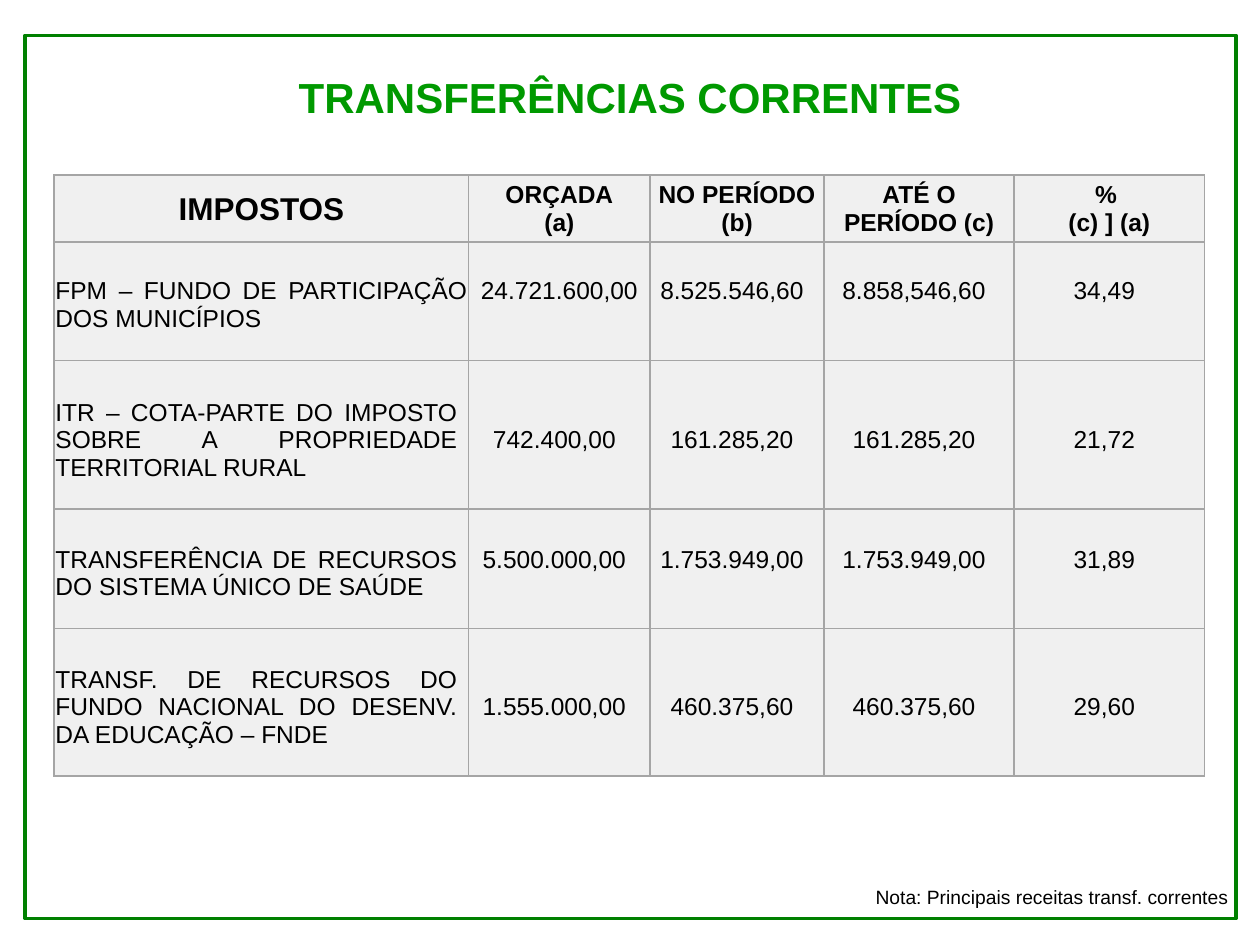
from lxml import etree
from pptx import Presentation
from pptx.dml.color import RGBColor
from pptx.enum.shapes import MSO_SHAPE
from pptx.enum.text import MSO_ANCHOR, PP_ALIGN
from pptx.oxml.ns import qn
from pptx.util import Inches, Pt

RECTANGLE = MSO_SHAPE.RECTANGLE
MIDDLE, BOTTOM = MSO_ANCHOR.MIDDLE, MSO_ANCHOR.BOTTOM
CENTER, JUSTIFY, LEFT = PP_ALIGN.CENTER, PP_ALIGN.JUSTIFY, PP_ALIGN.LEFT
TITLE_ONLY = 5

FONT = "Arial"
BLACK = "000000"
TITLE_GREEN = "009900"
FRAME_GREEN = "008000"
CELL_GREY = "F0F0F0"
BORDER_GREY = "A5A5A5"

COLUMN_WIDTHS = [3.29, 1.44, 1.38, 1.51, 1.51]
ROW_HEIGHTS = [0.53, 0.94, 1.18, 0.95, 1.17]
LINE_HEIGHT = 0.22

HEADERS = [
    ["IMPOSTOS"],
    ["ORÇADA", "(a)"],
    ["NO PERÍODO", "(b)"],
    ["ATÉ O PERÍODO (c)"],
    ["% ", "(c) ] (a)"],
]
REVENUES = [
    ["FPM – FUNDO DE PARTICIPAÇÃO DOS MUNICÍPIOS",
     "24.721.600,00", "8.525.546,60", "8.858,546,60", "34,49"],
    ["ITR – COTA-PARTE DO IMPOSTO SOBRE A PROPRIEDADE TERRITORIAL RURAL",
     "742.400,00", "161.285,20", "161.285,20", "21,72"],
    ["TRANSFERÊNCIA DE RECURSOS DO SISTEMA ÚNICO DE SAÚDE",
     "5.500.000,00", "1.753.949,00", "1.753.949,00", "31,89"],
    ["TRANSF. DE RECURSOS DO FUNDO NACIONAL DO DESENV. DA EDUCAÇÃO – FNDE",
     "1.555.000,00", "460.375,60", "460.375,60", "29,60"],
]


def rgb(color):
    return RGBColor.from_string(color)


def write_lines(frame, lines, size, align, color=BLACK, bold=False):
    """Write each line as one paragraph holding one run."""
    for index, line in enumerate(lines):
        para = frame.paragraphs[0] if index == 0 else frame.add_paragraph()
        para.alignment = align
        span = para.add_run()
        span.text = line
        span.font.name = FONT
        span.font.size = Pt(size)
        span.font.bold = bold
        span.font.color.rgb = rgb(color)


def add_title(page, text):
    title = page.shapes.title
    title.left, title.top = Inches(2.24), Inches(0.52)
    title.width, title.height = Inches(5.52), Inches(0.5)
    frame = title.text_frame
    frame.word_wrap = False
    frame.vertical_anchor = MIDDLE
    write_lines(frame, [text], 24, CENTER, TITLE_GREEN, bold=True)


def add_frame(page):
    border = page.shapes.add_shape(
        RECTANGLE, Inches(0.2), Inches(0.28), Inches(9.61), Inches(7.01))
    border.shadow.inherit = False
    border.fill.background()
    border.line.color.rgb = rgb(FRAME_GREEN)
    border.line.width = Pt(2)


def add_cell_borders(cell):
    """Put the four border lines ahead of the fill, as the schema requires."""
    properties = cell._tc.get_or_add_tcPr()
    for index, side in enumerate(["lnL", "lnR", "lnT", "lnB"]):
        line = etree.Element(qn(f"a:{side}"), w=str(Pt(1)))
        fill = etree.SubElement(line, qn("a:solidFill"))
        etree.SubElement(fill, qn("a:srgbClr"), val=BORDER_GREY)
        properties.insert(index, line)


def fill_cell(cell, lines, size, align, anchor, right=0.01, bottom=0, bold=False):
    cell.fill.solid()
    cell.fill.fore_color.rgb = rgb(CELL_GREY)
    add_cell_borders(cell)
    cell.vertical_anchor = anchor
    cell.margin_left = cell.margin_top = Inches(0.01)
    cell.margin_right = Inches(right)
    cell.margin_bottom = Inches(bottom)
    write_lines(cell.text_frame, lines, size, align, bold=bold)


def add_revenue_table(page):
    table = page.shapes.add_table(
        len(ROW_HEIGHTS), len(COLUMN_WIDTHS), Inches(0.43), Inches(1.39),
        Inches(sum(COLUMN_WIDTHS)), Inches(sum(ROW_HEIGHTS))).table
    table.first_row = False
    table.horz_banding = False
    for column, width in zip(table.columns, COLUMN_WIDTHS):
        column.width = Inches(width)
    for row, height in zip(table.rows, ROW_HEIGHTS):
        row.height = Inches(height)

    for column, lines in enumerate(HEADERS):
        size = 18 if column == 0 else 14
        fill_cell(table.cell(0, column), lines, size, CENTER, MIDDLE, bold=True)

    for row, values in enumerate(REVENUES, start=1):
        for column, value in enumerate(values):
            is_label = column == 0
            # Amounts stand one line above the last line of the label.
            fill_cell(
                table.cell(row, column), [value], 14,
                JUSTIFY if is_label else CENTER, BOTTOM,
                right=0.01 if row == 1 and column < 2 else 0.09,
                bottom=LINE_HEIGHT if is_label else 2 * LINE_HEIGHT)


def add_note(page, text):
    box = page.shapes.add_textbox(
        Inches(6.85), Inches(6.98), Inches(3.15), Inches(0.29))
    box.text_frame.word_wrap = True
    write_lines(box.text_frame, [text], 11, LEFT)


def main():
    deck = Presentation()
    deck.slide_width, deck.slide_height = Inches(10), Inches(7.5)
    page = deck.slides.add_slide(deck.slide_layouts[TITLE_ONLY])
    add_title(page, "TRANSFERÊNCIAS CORRENTES")
    add_frame(page)
    add_revenue_table(page)
    add_note(page, "Nota: Principais receitas transf. correntes")
    deck.save("out.pptx")


if __name__ == "__main__":
    main()
